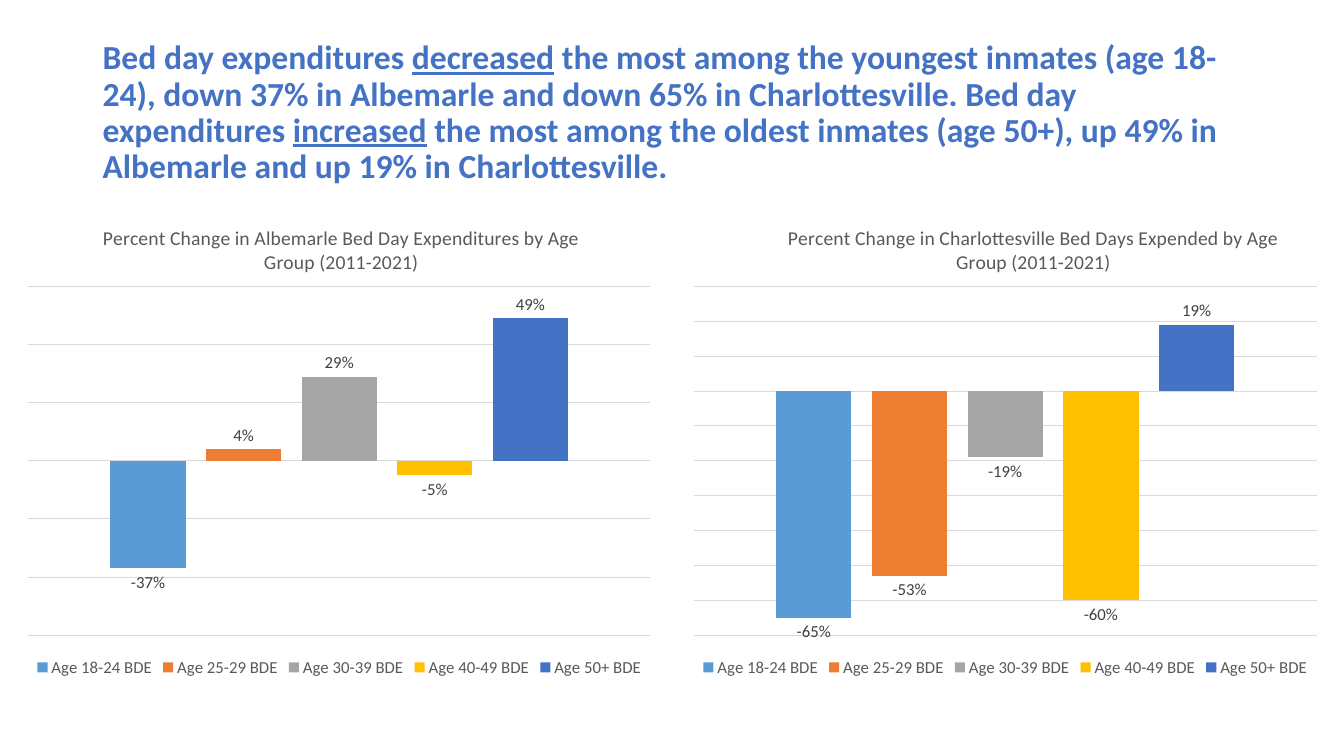
from pptx import Presentation
from pptx import util as u
from pptx.chart.data import CategoryChartData
from pptx.dml.color import RGBColor
from pptx.enum import chart as ch, text
from pptx.oxml import parse_xml
from pptx.oxml.ns import nsdecls

COLOURS = {
    "heading": "4472C4", "muted": "595959", "label": "404040",
    "grid": "D9D9D9", "black": "000000",
}
AGE_GROUPS = {
    "Age 18-24 BDE": "5B9BD5", "Age 25-29 BDE": "ED7D31",
    "Age 30-39 BDE": "A5A5A5", "Age 40-49 BDE": "FFC000",
    "Age 50+ BDE": "4472C4",
}
HEADING = [
    ("Bed day expenditures ", False),
    ("decreased", True),
    (" the most among the youngest inmates (age 18-24), down 37% in Albemarle"
     " and down 65% in Charlottesville. Bed day expenditures ", False),
    ("increased", True),
    (" the most among the oldest inmates (age 50+), up 49% in Albemarle"
     " and up 19% in Charlottesville.", False),
]


class Slide:
    FONT = "Calibri"
    SCALE = 9144

    def __init__(self, deck):
        self.page = deck.slides.add_slide(deck.slide_layouts[6])

    def px(self, *lengths):
        return [u.Emu(length * self.SCALE) for length in lengths]

    def style(self, font, size, colour, bold=False):
        font.name = self.FONT
        font.size = u.Pt(size)
        font.bold = bold
        font.color.rgb = RGBColor.from_string(colour)

    def heading(self, place, spans):
        frame = self.page.shapes.add_textbox(*self.px(*place)).text_frame
        frame.word_wrap = True
        frame.vertical_anchor = text.MSO_ANCHOR.MIDDLE
        para = frame.paragraphs[0]
        para.line_spacing = 0.9
        for words, underlined in spans:
            span = para.add_run()
            span.text = words
            span.font.underline = underlined
            self.style(span.font, 24, COLOURS["heading"], True)

    def layout(self, element, target=None, **fractions):
        for old in element.findall("{*}layout"):
            element.remove(old)
        inner = f'<c:layoutTarget val="{target}"/>' if target else ""
        modes = "".join(f'<c:{axis}Mode val="edge"/>' for axis in "xy")
        sizes = "".join(f'<c:{key} val="{value}"/>' for key, value in fractions.items())
        return parse_xml(f'<c:layout {nsdecls("c")}><c:manualLayout>{inner}{modes}'
                         f'{sizes}</c:manualLayout></c:layout>')

    def column_chart(self, place, title, values, low, high, step, title_x):
        data = CategoryChartData(number_format="0%")
        data.categories = ["1"]
        for name, value in zip(AGE_GROUPS, values):
            data.add_series(name, [value])
        chart = self.page.shapes.add_chart(
            ch.XL_CHART_TYPE.COLUMN_CLUSTERED, *self.px(*place), data).chart
        self.style(chart.font, 12, COLOURS["black"])

        span = chart.chart_title.text_frame.paragraphs[0].add_run()
        span.text = title
        self.style(span.font, 14, COLOURS["muted"])
        chart.chart_title.include_in_layout = False
        heading = chart.chart_title._element
        position = self.layout(heading, x=title_x, y=0.04)
        heading.find("{*}tx").addnext(position)

        area = chart.plots[0]._element.getparent()
        area.insert(0, self.layout(area, "inner", x=0.02, y=0.177, w=0.96, h=0.727))

        chart.has_legend = True
        chart.legend.position = ch.XL_LEGEND_POSITION.BOTTOM
        chart.legend.include_in_layout = False
        self.style(chart.legend.font, 12, COLOURS["muted"])

        axis = chart.value_axis
        axis.minimum_scale, axis.maximum_scale, axis.major_unit = low, high, step
        axis.has_major_gridlines = True
        line = axis.major_gridlines.format.line
        line.width = u.Pt(0.75)
        line.color.rgb = RGBColor.from_string(COLOURS["grid"])
        axis.visible = chart.category_axis.visible = False

        plot = chart.plots[0]
        plot.gap_width, plot.overlap = 219, -27
        plot.vary_by_categories = False
        for series, colour in zip(plot.series, AGE_GROUPS.values()):
            series.invert_if_negative = False
            series.format.fill.solid()
            series.format.fill.fore_color.rgb = RGBColor.from_string(colour)
            labels = series.data_labels
            labels.show_value = True
            labels.number_format = "0%"
            labels.number_format_is_linked = False
            labels.position = ch.XL_LABEL_POSITION.OUTSIDE_END
            self.style(labels.font, 12, COLOURS["label"])


def main():
    deck = Presentation()
    deck.slide_width, deck.slide_height = u.Inches(13.33), u.Inches(7.5)
    slide = Slide(deck)
    slide.heading((92, 40, 1150, 145), HEADING)
    slide.column_chart(
        (15, 200, 643, 476),
        "Percent Change in Albemarle Bed Day Expenditures by Age Group (2011-2021)",
        [-0.37, 0.04, 0.29, -0.05, 0.49], -0.6, 0.6, 0.2, 0.13)
    slide.column_chart(
        (675, 200, 644, 476),
        "Percent Change in Charlottesville Bed Days Expended by Age Group (2011-2021)",
        [-0.65, -0.53, -0.19, -0.6, 0.19], -0.7, 0.3, 0.1, 0.16)
    deck.save("out.pptx")


if __name__ == "__main__":
    main()
